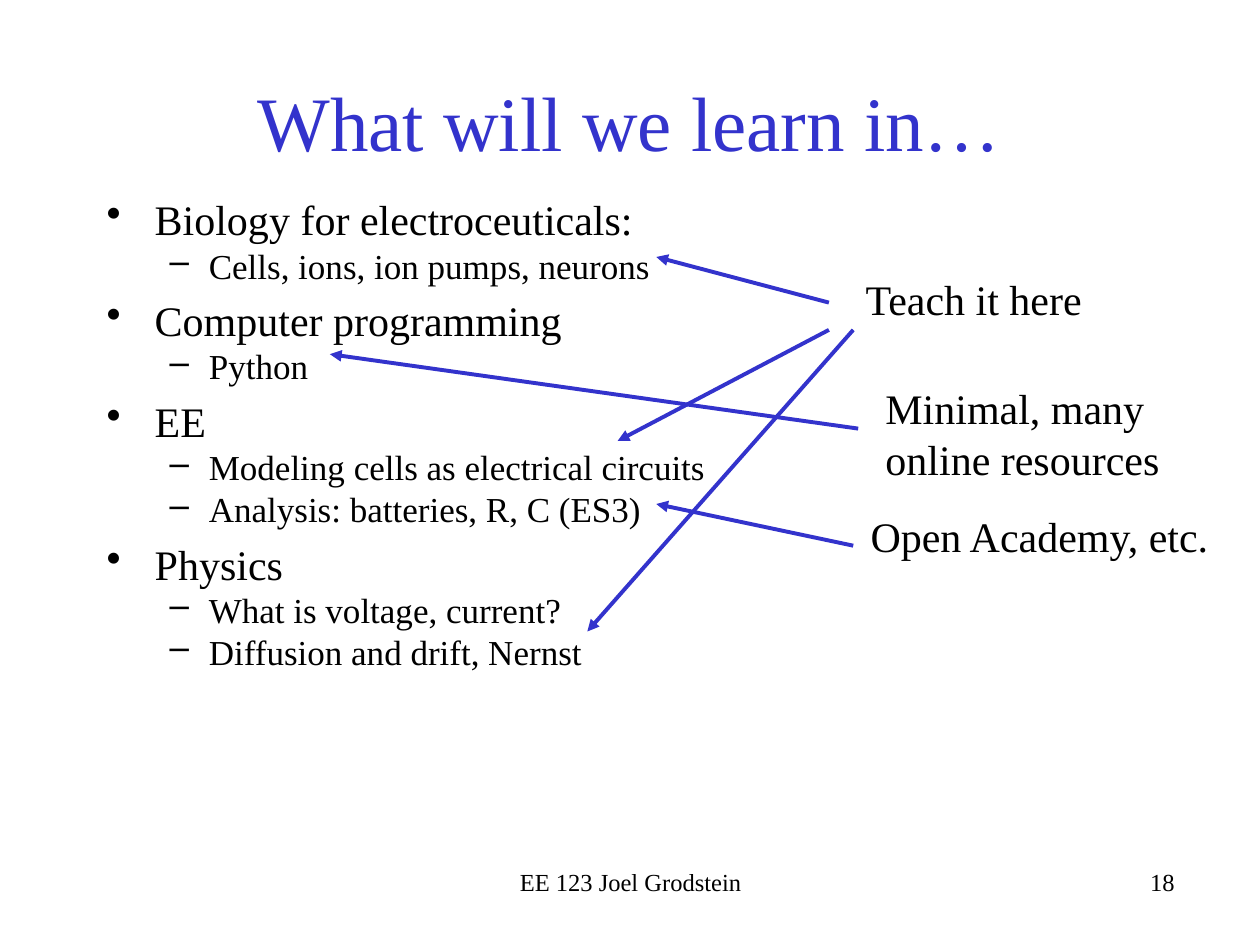
from lxml.etree import SubElement
from pptx import Presentation
from pptx.dml.color import RGBColor
from pptx.enum.shapes import MSO_CONNECTOR
from pptx.enum.text import MSO_ANCHOR, PP_ALIGN
from pptx.oxml.ns import qn
from pptx.util import Cm, Pt

THEME = {
    "font": "Times New Roman",
    "text": RGBColor(0x00, 0x00, 0x00),
    "accent": RGBColor(0x33, 0x33, 0xCC),
    "title": 44,
    "topic": 24,
    "detail": 20,
    "footer": 14,
    "line": 2.25,
}

TITLE = "What will we learn in…"
TOPICS = [
    ("Biology for electroceuticals:", ["Cells, ions, ion pumps, neurons"]),
    ("Computer programming", ["Python"]),
    ("EE", ["Modeling cells as electrical circuits", "Analysis: batteries, R, C (ES3)"]),
    ("Physics", ["What is voltage, current?", "Diffusion and drift, Nernst"]),
]
NOTES = [
    ("Teach it here", (17.2, 5.38, 6.15, 1.27)),
    ("Open Academy, etc.", (17.3, 10.16, 7.39, 1.27)),
    ("Minimal, many online resources", (17.6, 7.59, 6.15, 2.31)),
]
FOOTERS = [
    ("EE 123 Joel Grodstein", 8.69, PP_ALIGN.CENTER),
    ("18", 15.88, PP_ALIGN.RIGHT),
]
ARROWS = [
    ((16.71, 6.1), (13.23, 5.18)),
    ((17.2, 6.65), (11.84, 12.73)),
    ((17.3, 8.64), (6.65, 7.14)),
    ((17.2, 11), (13.23, 10.16)),
    ((16.71, 6.65), (12.45, 8.89)),
]
BULLETS = {
    "topic": ("•", 0.97, -0.97, 4.8),
    "detail": ("–", 2.06, -0.79, 0),
}


def write(paragraph, text, size, color="text", align=PP_ALIGN.LEFT):
    paragraph.text = text
    paragraph.alignment = align
    font = paragraph.runs[0].font
    font.name = THEME["font"]
    font.size = Pt(THEME[size])
    font.color.rgb = THEME[color]


def add_text_frame(slide, box):
    shape = slide.shapes.add_textbox(*map(Cm, box))
    shape.text_frame.word_wrap = True
    return shape.text_frame


def add_label(slide, text, box, size, color="text", align=PP_ALIGN.LEFT):
    text_frame = add_text_frame(slide, box)
    write(text_frame.paragraphs[0], text, size, color, align)
    return text_frame


def add_bullet(paragraph, kind):
    character, margin, indent, space = BULLETS[kind]
    paragraph.level = list(BULLETS).index(kind)
    paragraph.space_before = Pt(space)
    properties = paragraph._p.get_or_add_pPr()
    properties.set("marL", str(Cm(margin)))
    properties.set("indent", str(Cm(indent)))
    SubElement(properties, qn("a:buChar"), char=character)


def add_topics(slide, box):
    text_frame = add_text_frame(slide, box)
    rows = []
    for topic, details in TOPICS:
        rows.append((topic, "topic"))
        rows.extend((detail, "detail") for detail in details)
    for index, (text, kind) in enumerate(rows):
        paragraph = text_frame.add_paragraph() if index else text_frame.paragraphs[0]
        write(paragraph, text, kind)
        add_bullet(paragraph, kind)


def add_arrow(slide, start, end):
    connector = slide.shapes.add_connector(
        MSO_CONNECTOR.STRAIGHT, *map(Cm, start + end)
    )
    connector.line.color.rgb = THEME["accent"]
    connector.line.width = Pt(THEME["line"])
    SubElement(connector.line._get_or_add_ln(), qn("a:tailEnd"), type="triangle")
    SubElement(connector._element.spPr, qn("a:effectLst"))


def main():
    presentation = Presentation()
    presentation.slide_width = Cm(25.4)
    presentation.slide_height = Cm(19.05)
    slide = presentation.slides.add_slide(presentation.slide_layouts[6])

    title = add_label(
        slide, TITLE, (1.9, 0.85, 21.6, 3.18), "title", "accent", PP_ALIGN.CENTER
    )
    title.vertical_anchor = MSO_ANCHOR.MIDDLE
    add_topics(slide, (1.9, 3.78, 18.36, 12.27))
    for text, left, align in FOOTERS:
        add_label(slide, text, (left, 17.35, 8.05, 1.27), "footer", align=align)
    for start, end in ARROWS:
        add_arrow(slide, start, end)
    for text, box in NOTES:
        add_label(slide, text, box, "topic")

    presentation.save("out.pptx")


if __name__ == "__main__":
    main()
